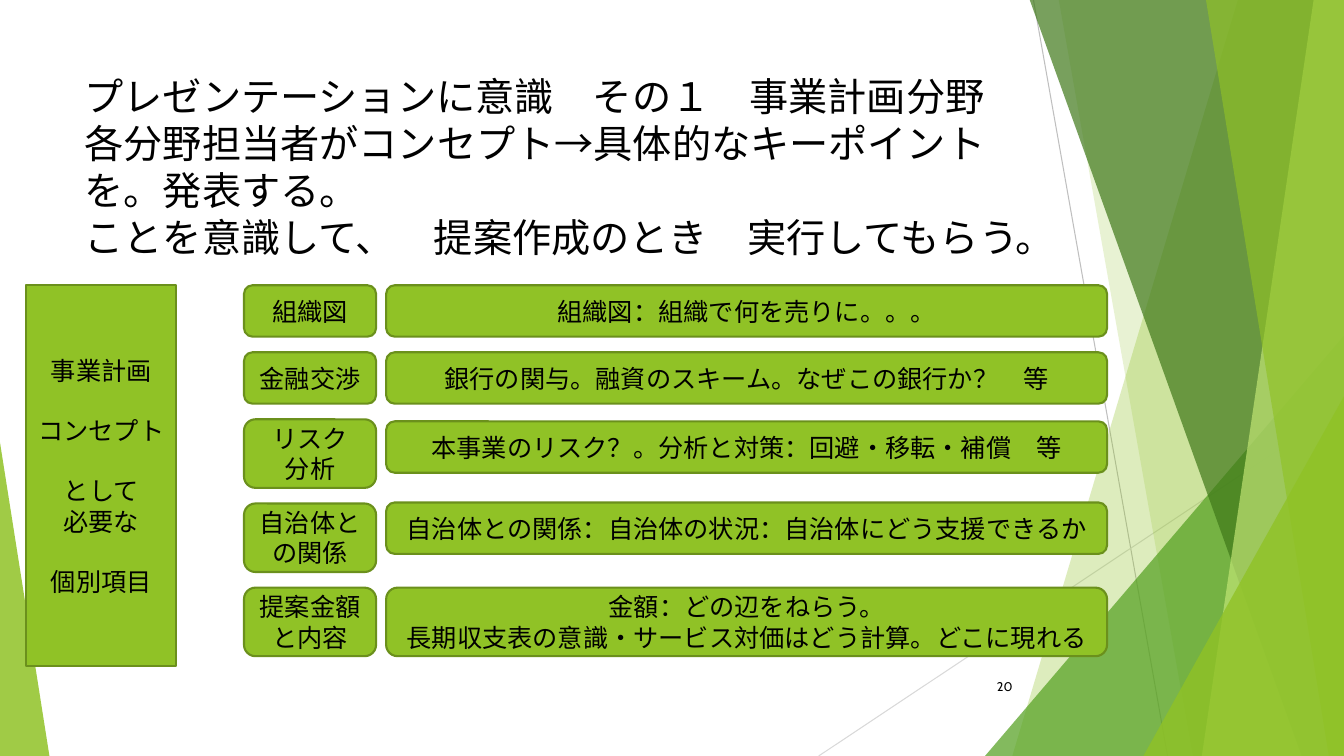
from lxml import etree
from pptx import Presentation, util as u
from pptx.dml.color import RGBColor
from pptx.enum import shapes as kinds, text as styles
from pptx.oxml import ns

WIDTH, HEIGHT = 13.33, 7.5
FONT = "Cabin"
GREEN, EDGE, BLACK = "90C226", "6B901C", "000000"
CENTER, RIGHT = styles.PP_ALIGN.CENTER, styles.PP_ALIGN.RIGHT

RAYS = [((10.25, 0), (11.58, HEIGHT), "BFBFBF"),
        ((WIDTH, 4.03), (8.12, HEIGHT), "D9D9D9")]
BANDS_BACK = [(12.28, 10.04, GREEN, 30), (10.5, 11.83, GREEN, 20)]
BANDS_FRONT = [(10.21, 12.91, "3F7819", 70), (13.03, 11.92, "C0E474", 70),
               (11.96, 13.18, GREEN, 65)]
PEAK_BACK = (9.77, 3.33, 3.56, 1, "54A021", 72)
PEAKS_FRONT = [(11.34, 3.93, 1.99, 1, GREEN, 80), (0, 4.39, 0.49, 0, GREEN, 85)]

TITLE = """プレゼンテーションに意識　その１　事業計画分野
各分野担当者がコンセプト→具体的なキーポイント
を。発表する。
ことを意識して、　提案作成のとき　実行してもらう。"""
CONCEPT = "事業計画\nコンセプト\nとして\n必要な\n個別項目"
CONCEPT_BREAKS = (1, 2, 4)
TOPICS = [
    ("組織図", 1, "組織図：組織で何を売りに。。。", 0),
    ("金融交渉", 1, "銀行の関与。融資のスキーム。なぜこの銀行か？　等", 0),
    ("リスク\n分析", 2, "本事業のリスク？。分析と対策：回避・移転・補償　等", 0.02),
    ("自治体との関係", 2, "自治体との関係：自治体の状況：自治体にどう支援できるか", -0.01),
    ("提案金額\nと内容", 2,
     "金額：どの辺をねらう。\n長期収支表の意識・サービス対価はどう計算。どこに現れる", 0),
]
ROW_HEIGHT = {1: 0.51, 2: 0.68}
ROW_GAP = 0.155


def color(hex_code):
    """Turn a hex string into a colour."""
    return RGBColor.from_string(hex_code)


def inches(*lengths):
    """Convert several lengths in inches."""
    return [u.Inches(length) for length in lengths]


def write(frame, words, size, align=None):
    """Set the words of a text frame and format them."""
    frame.text = words
    frame.word_wrap = True
    for paragraph in frame.paragraphs:
        paragraph.alignment = align
        for run in paragraph.runs:
            run.font.name = FONT
            run.font.size = u.Pt(size)
            run.font.color.rgb = color(BLACK)


def glaze(facet, hex_code, opacity):
    """Fill a facet with a translucent colour and no outline."""
    facet.shadow.inherit = False
    facet.line.fill.background()
    facet.fill.solid()
    facet.fill.fore_color.rgb = color(hex_code)
    tint = facet._element.spPr.find(".//" + ns.qn("a:srgbClr"))
    etree.SubElement(tint, ns.qn("a:alpha"), val=str(opacity * 1000))


def ray(slide, start, end, hex_code):
    """Draw one thin background line."""
    line = slide.shapes.add_connector(
        kinds.MSO_CONNECTOR.STRAIGHT, *inches(*start, *end))
    line.line.color.rgb = color(hex_code)
    line.line.width = u.Pt(0.75)
    etree.SubElement(line._element.spPr, ns.qn("a:effectLst"))


def band(slide, top_x, bottom_x, hex_code, opacity):
    """Draw a full-height band from a slanted edge to the right side."""
    builder = slide.shapes.build_freeform(*inches(top_x, -0.01))
    corners = [(WIDTH, -0.01), (WIDTH, HEIGHT), (bottom_x, HEIGHT)]
    builder.add_line_segments([inches(*corner) for corner in corners])
    glaze(builder.convert_to_shape(), hex_code, opacity)


def peak(slide, left, top, width, apex, hex_code, opacity):
    """Draw a right triangle that stands on the bottom of the slide."""
    triangle = slide.shapes.add_shape(
        kinds.MSO_SHAPE.ISOSCELES_TRIANGLE,
        *inches(left, top, width, HEIGHT - top))
    triangle.adjustments[0] = apex
    glaze(triangle, hex_code, opacity)


def backdrop(slide):
    """Draw the lines and green facets behind the content."""
    for line in RAYS:
        ray(slide, *line)
    for facet in BANDS_BACK:
        band(slide, *facet)
    peak(slide, *PEAK_BACK)
    for facet in BANDS_FRONT:
        band(slide, *facet)
    for facet in PEAKS_FRONT:
        peak(slide, *facet)


def heading(slide, left, top, width, height):
    """Place the title above the backdrop."""
    title = slide.shapes.title
    slide.shapes._spTree.append(title._element)
    title.left, title.top, title.width, title.height = inches(
        left, top, width, height)
    write(title.text_frame, TITLE, 28, styles.PP_ALIGN.LEFT)
    title.text_frame.auto_size = styles.MSO_AUTO_SIZE.NONE
    title.text_frame.vertical_anchor = styles.MSO_ANCHOR.TOP


def page_number(slide, left, top, width, height):
    """Place the page number."""
    number = slide.shapes.add_textbox(*inches(left, top, width, height))
    write(number.text_frame, "20", 9, RIGHT)
    number.text_frame.vertical_anchor = styles.MSO_ANCHOR.MIDDLE


def panel(slide, outline, words, left, top, width, height):
    """Draw a green panel with centred words."""
    block = slide.shapes.add_shape(outline, *inches(left, top, width, height))
    block.shadow.inherit = False
    block.fill.solid()
    block.fill.fore_color.rgb = color(GREEN)
    block.line.color.rgb = color(EDGE)
    block.line.width = u.Pt(1.5)
    write(block.text_frame, words, 18, CENTER)
    block.text_frame.vertical_anchor = styles.MSO_ANCHOR.MIDDLE
    return block


def concept(slide, left, top, width, height):
    """Draw the concept column with its spaced groups of words."""
    column = panel(slide, kinds.MSO_SHAPE.RECTANGLE, CONCEPT,
                   left, top, width, height)
    for index in CONCEPT_BREAKS:
        column.text_frame.paragraphs[index].space_before = u.Pt(21.6)


def topics(slide, left, top, width):
    """Stack the topic rows, each a label and its detail."""
    rounded = kinds.MSO_SHAPE.ROUNDED_RECTANGLE
    label_width, gutter = 1.31, 0.1
    detail_left = left + label_width + gutter
    detail_width = width - label_width - gutter
    for label, label_lines, detail, shift in TOPICS:
        height = ROW_HEIGHT[label_lines]
        detail_height = ROW_HEIGHT[len(detail.splitlines())]
        panel(slide, rounded, label, left, top, label_width, height)
        panel(slide, rounded, detail, detail_left, top + shift,
              detail_width, detail_height)
        top += height + ROW_GAP


def main():
    """Build the slide and save it."""
    deck = Presentation()
    deck.slide_width, deck.slide_height = inches(WIDTH, HEIGHT)
    slide = deck.slides.add_slide(deck.slide_layouts[5])
    backdrop(slide)
    heading(slide, 0.74, 0.67, 9.77, 2.16)
    page_number(slide, 9.39, 6.61, 0.75, 0.4)
    concept(slide, 0.26, 2.83, 1.49, 3.78)
    topics(slide, 2.42, 2.83, 8.56)
    deck.save("out.pptx")


if __name__ == "__main__":
    main()
